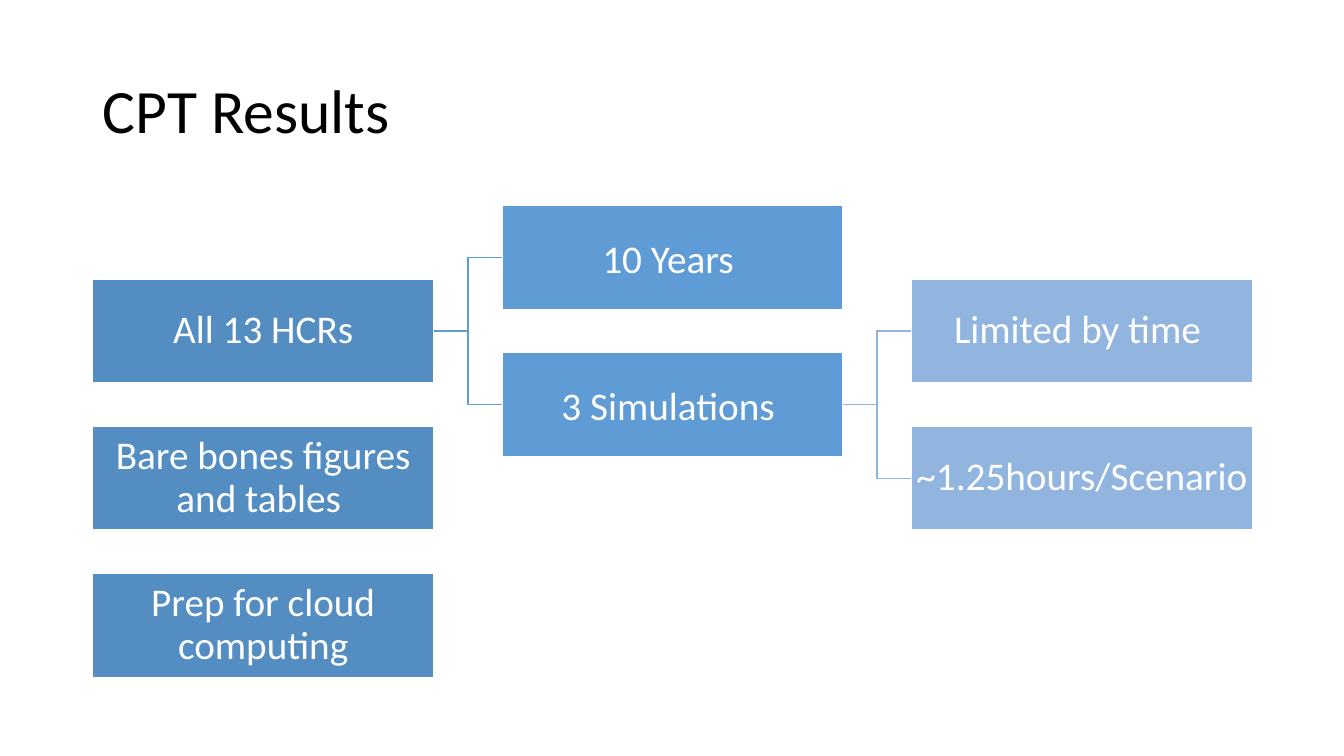
from pptx import Presentation, util as u
from pptx.dml.color import RGBColor
from pptx.enum import shapes, text
from pptx.oxml.ns import qn
from lxml import etree

LEFT, TOP = 0.92, 2.04
COL, ROW = 4.06, 0.73
WIDE, HIGH = 3.38, 1.03
FONT = "Calibri"
HUES = ["538DC1", "5F9CD5", "91B5DE"]
NODES = [
    ("All 13 HCRs", 0, 1),
    ("Bare bones figures and tables ", 0, 3),
    ("Prep for cloud computing", 0, 5),
    ("10 Years ", 1, 0),
    ("3 Simulations ", 1, 2),
    ("Limited by time ", 2, 1),
    ("~1.25hours/Scenario", 2, 3),
]
LINKS = [(0, 3), (0, 4), (4, 5), (4, 6)]


def tint(color):
    return RGBColor.from_string(color)


def write(frame, words, size, color, space=0.9):
    frame.word_wrap = True
    frame.vertical_anchor = text.MSO_ANCHOR.MIDDLE
    para = frame.paragraphs[0]
    para.text = words
    para.line_spacing = space
    para.font.name = FONT
    para.font.size = u.Pt(size)
    para.font.color.rgb = tint(color)
    return para


def title(slide, words):
    box = slide.shapes.add_textbox(
        u.Inches(LEFT), u.Inches(0.4), u.Inches(11.5), u.Inches(1.45))
    write(box.text_frame, words, 44, "000000")


def node(slide, words, col, row):
    box = slide.shapes.add_shape(
        shapes.MSO_SHAPE.RECTANGLE,
        u.Inches(LEFT + col * COL), u.Inches(TOP + row * ROW),
        u.Inches(WIDE), u.Inches(HIGH))
    box.shadow.inherit = False
    box.fill.solid()
    box.fill.fore_color.rgb = tint(HUES[col])
    box.line.color.rgb = tint("FFFFFF")
    box.line.width = u.Pt(1)
    frame = box.text_frame
    frame.margin_left = frame.margin_right = u.Inches(0.02)
    frame.margin_top = frame.margin_bottom = u.Inches(0.02)
    para = write(frame, words, 28, "FFFFFF", 1.0 if col == 1 else 0.9)
    para.alignment = text.PP_ALIGN.CENTER
    return box


def link(slide, start, end, color):
    line = slide.shapes.add_connector(
        shapes.MSO_CONNECTOR.ELBOW, 0, 0, 0, 0)
    line.begin_connect(start, 3)
    line.end_connect(end, 1)
    line.line.color.rgb = tint(color)
    line.line.width = u.Pt(1)
    etree.SubElement(line._element.spPr, qn("a:effectLst"))


def main():
    deck = Presentation()
    deck.slide_width = u.Inches(13.33)
    deck.slide_height = u.Inches(7.5)
    slide = deck.slides.add_slide(deck.slide_layouts[6])
    title(slide, "CPT Results")
    boxes = [node(slide, *item) for item in NODES]
    for start, end in LINKS:
        link(slide, boxes[start], boxes[end], HUES[NODES[end][1]])
    deck.save("out.pptx")


if __name__ == "__main__":
    main()
